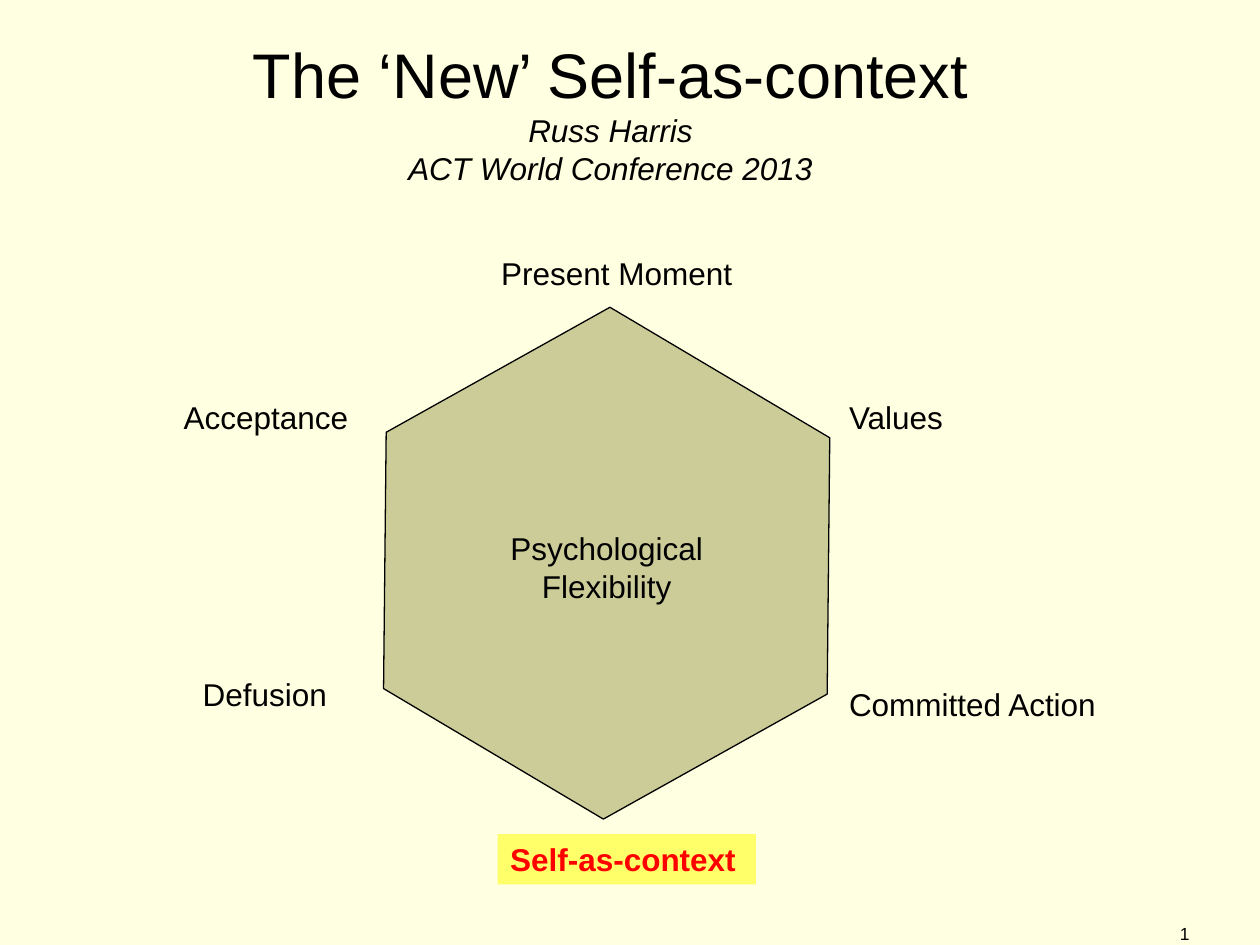
from pptx import Presentation
from pptx.dml.color import RGBColor
from pptx.enum.shapes import MSO_SHAPE
from pptx.enum.text import MSO_ANCHOR, PP_ALIGN
from pptx.util import Inches, Pt

LEFT, CENTER, RIGHT = PP_ALIGN.LEFT, PP_ALIGN.CENTER, PP_ALIGN.RIGHT
TOP = MSO_ANCHOR.TOP
HEXAGON, RECTANGLE = MSO_SHAPE.HEXAGON, MSO_SHAPE.RECTANGLE

COLORS = {
    "background": "FFFFE1",
    "hexagon": "CCCC99",
    "highlight": "FFFF69",
    "text": "000000",
    "emphasis": "FF0000",
}
FONT = "Arial"
WIDTH, HEIGHT = Inches(10), Inches(7.5)
COLUMNS, ROWS = 100, 75  # square grid cells over the whole slide
LABEL_HEIGHT = 4

# Processes around the hexagon: text, column, row, width in columns
LABELS = [
    ("Present Moment", 38.8, 19.7, 27.6),
    ("Defusion", 15.1, 53.1, 20.6),
    ("Acceptance", 13.6, 31.1, 15.7),
    ("Values", 66.4, 31.1, 25.2),
    ("Committed Action", 66.4, 53.9, 27.6),
]


def color(name):
    return RGBColor.from_string(COLORS[name])


def place(column, row, columns, rows):
    """Turn grid cells into left, top, width and height."""
    cell_width, cell_height = WIDTH / COLUMNS, HEIGHT / ROWS
    return (round(column * cell_width), round(row * cell_height),
            round(columns * cell_width), round(rows * cell_height))


def add_run(paragraph, text, size=18, ink="text", bold=False, italic=False):
    run = paragraph.add_run()
    run.text = text
    run.font.name = FONT
    run.font.size = Pt(size)
    run.font.bold = bold
    run.font.italic = italic
    run.font.color.rgb = color(ink)


def add_text(slide, cells, lines, align=LEFT, wrap=True, **style):
    """Add a text box with one paragraph per line."""
    frame = slide.shapes.add_textbox(*place(*cells)).text_frame
    frame.word_wrap = wrap
    for index, line in enumerate(lines):
        paragraph = frame.add_paragraph() if index else frame.paragraphs[0]
        paragraph.alignment = align
        add_run(paragraph, line, **style)


def add_filled_shape(slide, kind, cells, fill, outline=None):
    shape = slide.shapes.add_shape(kind, *place(*cells))
    shape.shadow.inherit = False
    shape.fill.solid()
    shape.fill.fore_color.rgb = color(fill)
    if outline:
        shape.line.color.rgb = color(outline)
        shape.line.width = Pt(0.75)
    else:
        shape.line.fill.background()
    return shape


def add_hexagon(slide):
    hexagon = add_filled_shape(slide, HEXAGON, (27.8, 27.1, 40.7, 35.2),
                               "hexagon", outline="text")
    hexagon.adjustments[0] = 0.29
    hexagon.rotation = 30.7


def add_highlight(slide):
    shape = add_filled_shape(slide, RECTANGLE, (39.5, 66.2, 20.5, LABEL_HEIGHT),
                             "highlight")
    frame = shape.text_frame
    frame.vertical_anchor = TOP
    paragraph = frame.paragraphs[0]
    paragraph.alignment = LEFT
    add_run(paragraph, "Self-as-context", ink="emphasis", bold=True)


def add_title(slide):
    frame = slide.shapes.add_textbox(*place(3.9, 2.3, 89.1, 16.2)).text_frame
    frame.word_wrap = True
    title = frame.paragraphs[0]
    title.alignment = CENTER
    add_run(title, "The ‘New’ Self-as-context", size=36)
    title.add_line_break()
    add_run(title, "Russ Harris", italic=True)
    event = frame.add_paragraph()
    event.alignment = CENTER
    add_run(event, "ACT World Conference 2013", italic=True)


def main():
    presentation = Presentation()
    presentation.slide_width, presentation.slide_height = WIDTH, HEIGHT
    slide = presentation.slides.add_slide(presentation.slide_layouts[6])
    slide.background.fill.solid()
    slide.background.fill.fore_color.rgb = color("background")

    # Hexagon with its core and surrounding processes
    add_hexagon(slide)
    add_text(slide, (39.5, 41.5, 17.3, 7), ["Psychological", "Flexibility"],
             align=CENTER, wrap=False)
    for text, column, row, columns in LABELS:
        add_text(slide, (column, row, columns, LABEL_HEIGHT), [text])
    add_highlight(slide)

    # Slide number and title
    add_text(slide, (74.6, 72.8, 20.8, 6.1), ["1"], align=RIGHT, size=10)
    add_title(slide)

    presentation.save("out.pptx")


if __name__ == "__main__":
    main()
